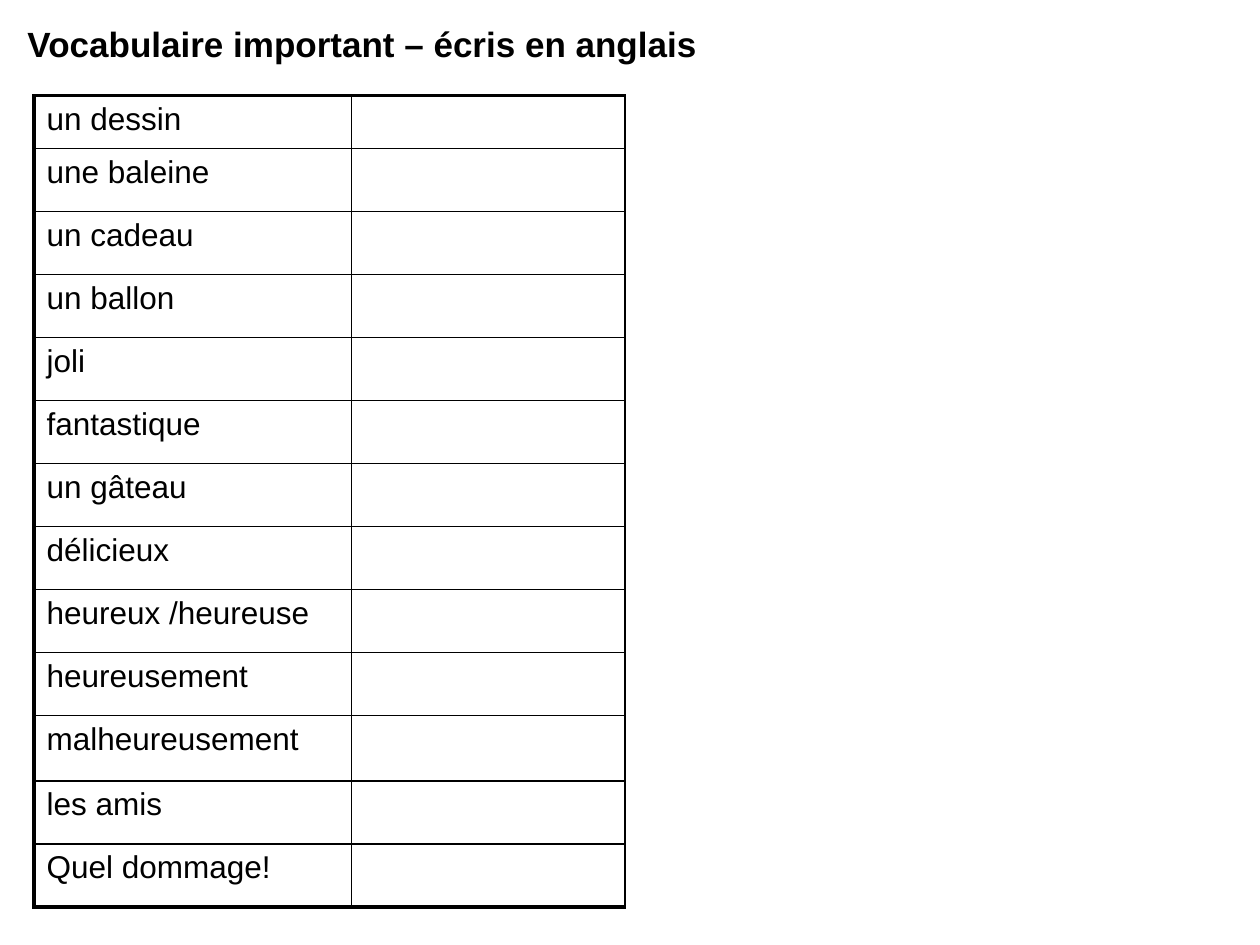
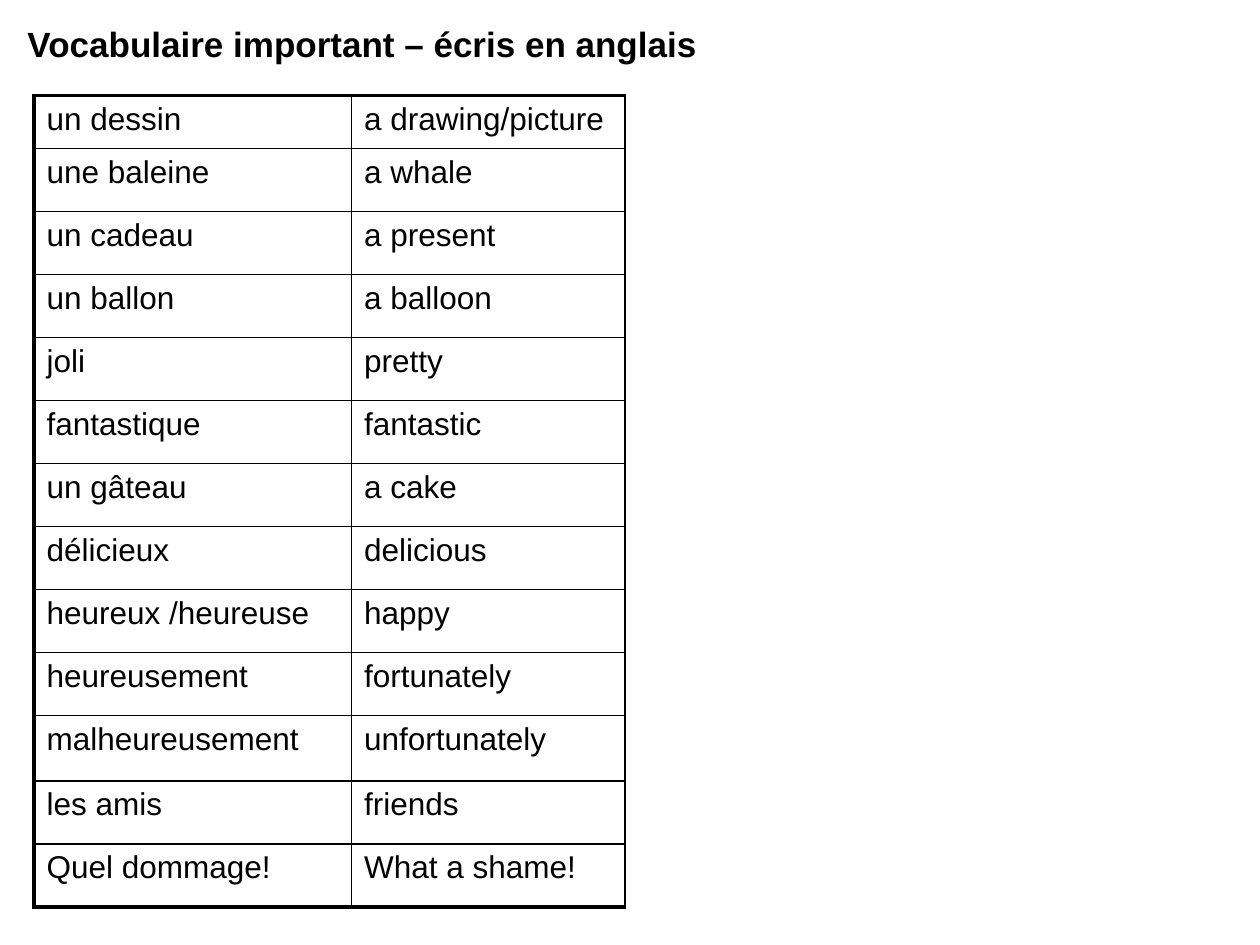
from dataclasses import dataclass

from lxml.etree import SubElement
from pptx import Presentation
from pptx.dml.color import RGBColor
from pptx.enum.text import MSO_AUTO_SIZE
from pptx.oxml.ns import qn
from pptx.util import Inches, Pt


@dataclass(frozen=True)
class Theme:
    font: str = "Arial"
    ink: str = "000000"
    title_size: float = 20
    word_size: float = 18
    thick: float = 2.25
    thin: float = 1


theme = Theme()

TITLE = "Vocabulaire important – écris en anglais"
VOCABULARY = [
    ("un dessin", "a drawing/picture"),
    ("une baleine", "a whale"),
    ("un cadeau", "a present"),
    ("un ballon", "a balloon"),
    ("joli", "pretty"),
    ("fantastique", "fantastic"),
    ("un gâteau", "a cake"),
    ("délicieux", "delicious"),
    ("heureux /heureuse", "happy"),
    ("heureusement", "fortunately"),
    ("malheureusement", "unfortunately"),
    ("les amis", "friends"),
    ("Quel dommage!", "What a shame!"),
]
COLUMN_WIDTHS = [2.52, 2.17]
ROW_HEIGHT = 0.5
SPECIAL_HEIGHTS = {0: 0.42, 10: 0.52}
LAST_ROW = len(VOCABULARY) - 1


def add_span(para, text, size, bold=False):
    span = para.add_run()
    span.text = text
    span.font.name = theme.font
    span.font.size = Pt(size)
    span.font.bold = bold
    span.font.color.rgb = RGBColor.from_string(theme.ink)


def set_borders(cell, widths):
    properties = cell._tc.get_or_add_tcPr()
    for position, (side, width) in enumerate(widths.items()):
        line = SubElement(properties, qn(f"a:ln{side}"), w=str(Pt(width)))
        fill = SubElement(line, qn("a:solidFill"))
        SubElement(fill, qn("a:srgbClr"), val=theme.ink)
        # Borders must come before the cell fill
        properties.insert(position, line)


deck = Presentation()
deck.slide_width = Inches(10)
deck.slide_height = Inches(7.5)

# The exercise comes first, then its answers
for show_answers in (False, True):
    page = deck.slides.add_slide(deck.slide_layouts[6])

    # Vocabulary table
    heights = [SPECIAL_HEIGHTS.get(row, ROW_HEIGHT) for row in range(len(VOCABULARY))]
    frame = page.shapes.add_table(
        len(VOCABULARY), len(COLUMN_WIDTHS), Inches(0.27), Inches(0.76),
        Inches(sum(COLUMN_WIDTHS)), Inches(sum(heights)))
    table = frame.table
    table.first_row = False
    table.horz_banding = False
    for column, width in zip(table.columns, COLUMN_WIDTHS):
        column.width = Inches(width)

    for row, (french, english) in enumerate(VOCABULARY):
        table.rows[row].height = Inches(heights[row])
        for column, word in enumerate((french, english if show_answers else "")):
            cell = table.cell(row, column)
            cell.fill.background()
            set_borders(cell, {
                "L": theme.thick if column == 0 else theme.thin,
                "R": theme.thin,
                "T": theme.thick if row == 0 else theme.thin,
                "B": theme.thick if row == LAST_ROW else theme.thin,
            })
            if word:
                add_span(cell.text_frame.paragraphs[0], word, theme.word_size)

    # Title
    box = page.shapes.add_textbox(Inches(0.12), Inches(0.13), Inches(6.3), Inches(0.44))
    box.text_frame.word_wrap = True
    box.text_frame.auto_size = MSO_AUTO_SIZE.SHAPE_TO_FIT_TEXT
    add_span(box.text_frame.paragraphs[0], TITLE, theme.title_size, bold=True)

deck.save("out.pptx")
